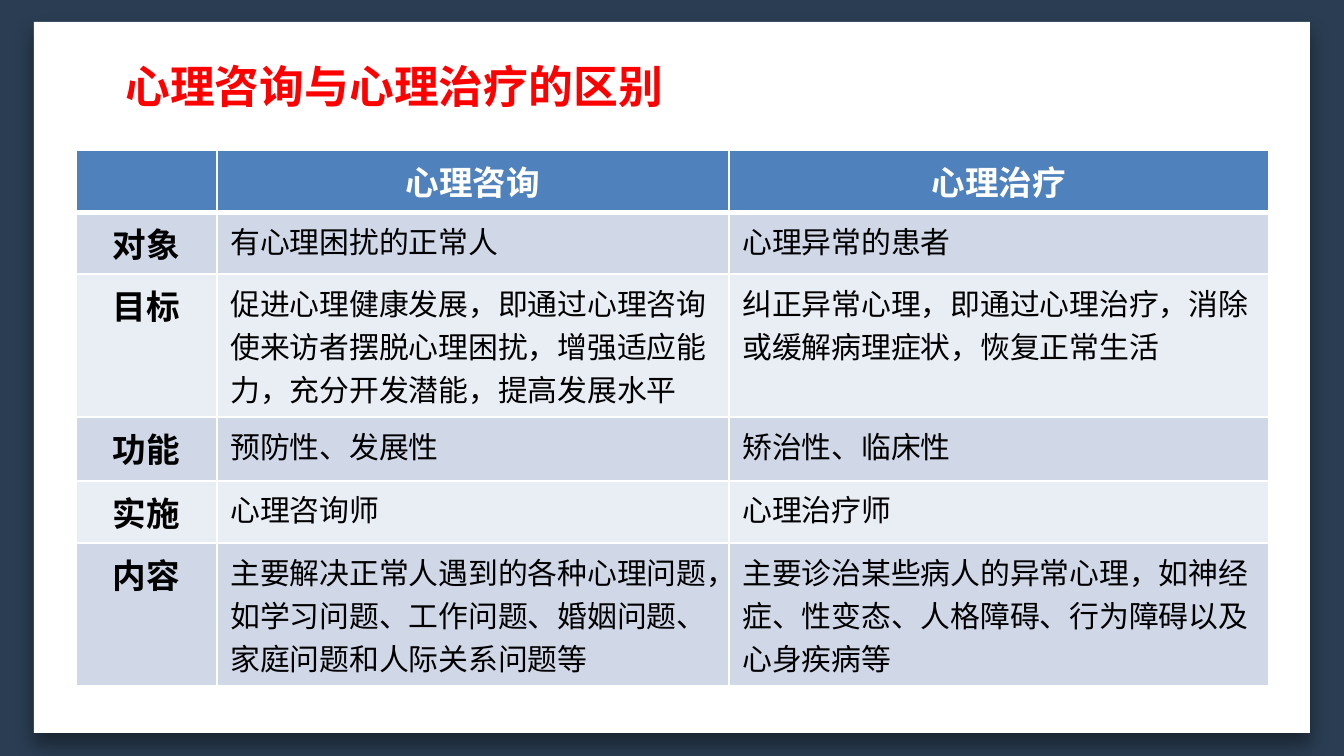
from lxml import etree
from pptx import Presentation
from pptx import util as u
from pptx.dml.color import RGBColor
from pptx.enum import shapes, text
from pptx.oxml import ns

EMU_PER_PX = 6804
FONT = "Noto Sans CJK SC"
COLORS = {
    "backdrop": "2A3D52", "white": "FFFFFF", "black": "000000", "red": "FF0000",
    "header": "4F81BD", "odd": "D0D8E8", "even": "E9EDF4",
}
CENTER, LEFT = text.PP_ALIGN.CENTER, text.PP_ALIGN.LEFT
FORMATS = {
    "title": {"size": 24, "bold": True, "color": "red", "align": CENTER},
    "header": {"size": 18, "bold": True, "color": "white", "align": CENTER},
    "label": {"size": 18, "bold": True, "color": "black", "align": CENTER},
    "body": {"size": 16, "bold": False, "color": "black", "align": LEFT},
}
COMPARISON = [
    ("", "心理咨询", "心理治疗"),
    ("对象", "有心理困扰的正常人", "心理异常的患者"),
    ("目标", "促进心理健康发展，即通过心理咨询使来访者摆脱心理困扰，增强适应能力，充分开发潜能，提高发展水平",
     "纠正异常心理，即通过心理治疗，消除或缓解病理症状，恢复正常生活"),
    ("功能", "预防性、发展性", "矫治性、临床性"),
    ("实施", "心理咨询师", "心理治疗师"),
    ("内容", "主要解决正常人遇到的各种心理问题，如学习问题、工作问题、婚姻问题、家庭问题和人际关系问题等",
     "主要诊治某些病人的异常心理，如神经症、性变态、人格障碍、行为障碍以及心身疾病等"),
]
COLUMN_WIDTHS = [141, 512, 540]
ROW_HEIGHTS = [60, 60, 95, 64, 50, 95]


def px(length):
    return u.Emu(length * EMU_PER_PX)


def rgb(name):
    return RGBColor.from_string(COLORS[name])


def add_xml(parent, tag, **attributes):
    child = etree.SubElement(parent, ns.qn(tag))
    for key, value in attributes.items():
        child.set(key, str(value))
    return child


class SlideBuilder:
    def __init__(self, slide):
        self.slide = slide
        slide.background.fill.solid()
        slide.background.fill.fore_color.rgb = rgb("backdrop")

    def add_words(self, paragraph, words, style):
        look = FORMATS[style]
        paragraph.alignment = look["align"]
        run = paragraph.add_run()
        run.text = words
        values = {"size": u.Pt(look["size"]), "bold": look["bold"], "name": FONT}
        for key, value in values.items():
            setattr(run.font, key, value)
        run.font.color.rgb = rgb(look["color"])
        add_xml(run._r.get_or_add_rPr(), "a:ea", typeface=FONT)

    def panel(self, *box):
        """Add the white sheet with a soft shadow below it."""
        sheet = self.slide.shapes.add_shape(
            shapes.MSO_SHAPE.RECTANGLE, *map(px, box))
        sheet.fill.solid()
        sheet.fill.fore_color.rgb = rgb("white")
        sheet.line.fill.background()
        sheet.shadow.inherit = False
        effects = sheet._element.spPr.find(ns.qn("a:effectLst"))
        shadow = add_xml(effects, "a:outerShdw", blurRad=u.Pt(10), dist=u.Pt(6),
                         dir=90 * 60000, algn="t", rotWithShape=0)
        shade = add_xml(shadow, "a:srgbClr", val=COLORS["black"])
        add_xml(shade, "a:alpha", val=40000)

    def title(self, words, *box):
        heading = self.slide.shapes.title
        for side, length in zip(("left", "top", "width", "height"), box):
            setattr(heading, side, px(length))
        frame = heading.text_frame
        frame.word_wrap = True
        frame.auto_size = text.MSO_AUTO_SIZE.NONE
        frame.vertical_anchor = text.MSO_ANCHOR.MIDDLE
        self.add_words(frame.paragraphs[0], words, "title")
        self.slide.shapes._spTree.append(heading._element)  # bring to front

    def borders(self, cell, **widths):
        properties = cell._tc.get_or_add_tcPr()
        for side in "LRTB":
            line = add_xml(properties, f"a:ln{side}", w=u.Pt(widths.get(side, 1)))
            fill = add_xml(line, "a:solidFill")
            add_xml(fill, "a:srgbClr", val=COLORS["white"])

    def cell(self, cell, words, row, column):
        rules = {0: {"B": 3}, 1: {"T": 3}}.get(row, {})
        self.borders(cell, **rules)
        cell.fill.solid()
        cell.fill.fore_color.rgb = rgb(
            "header" if row == 0 else "odd" if row % 2 else "even")
        if words:
            style = "header" if row == 0 else "body" if column else "label"
            paragraph = cell.text_frame.paragraphs[0]
            self.add_words(paragraph, words, style)
            spacing = add_xml(paragraph._p.get_or_add_pPr(), "a:spcBef")
            add_xml(spacing, "a:spcPct", val=20000)

    def table(self, rows, left, top):
        grid = self.slide.shapes.add_table(
            len(rows), len(rows[0]), px(left), px(top),
            px(sum(COLUMN_WIDTHS)), px(sum(ROW_HEIGHTS))).table
        for column, width in zip(grid.columns, COLUMN_WIDTHS):
            column.width = px(width)
        for row, height in zip(grid.rows, ROW_HEIGHTS):
            row.height = px(height)
        for r, entries in enumerate(rows):
            for c, words in enumerate(entries):
                self.cell(grid.cell(r, c), words, r, c)


def main():
    deck = Presentation()
    deck.slide_width, deck.slide_height = px(1344), px(756)
    builder = SlideBuilder(deck.slides.add_slide(deck.slide_layouts[5]))
    builder.panel(34, 22, 1276, 711)
    builder.table(COMPARISON, 76, 150)
    builder.title("心理咨询与心理治疗的区别", 94, 43, 600, 86)
    deck.save("out.pptx")


if __name__ == "__main__":
    main()
